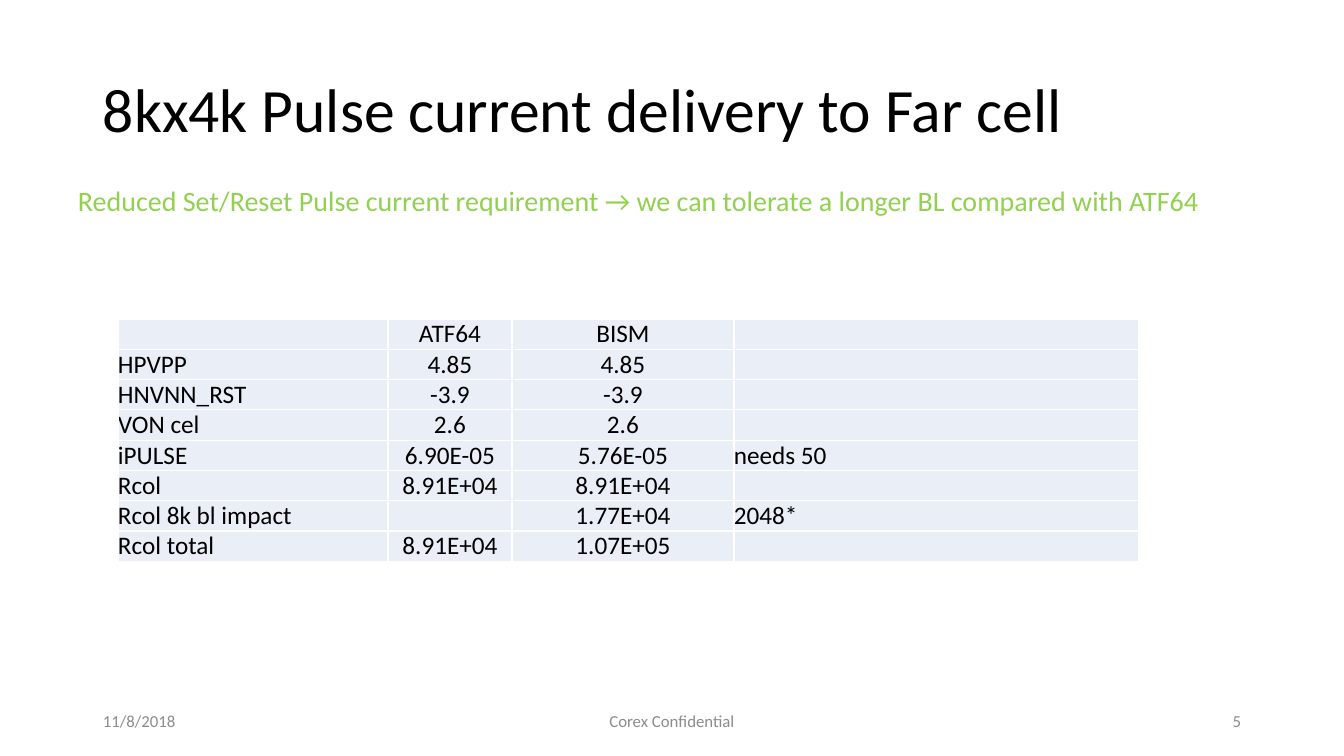
from lxml.etree import SubElement as Sub
from pptx import Presentation
from pptx.dml.color import RGBColor as Rgb
from pptx.enum.text import MSO_ANCHOR as Anchor, PP_ALIGN as Align
from pptx.oxml.ns import qn

COLORS = {"ink": "000000", "green": "92D050", "gray": "8C8C8C",
          "cell": "EAEFF7", "edge": "FFFFFF"}


def px(n):
    return round(n * 914400 / 100.8)


def write(frame, text, size, color, align, anchor):
    frame.vertical_anchor = anchor
    para = frame.paragraphs[0]
    para.text = text
    para.alignment = align
    para.font.name = "Calibri"
    para.font.size = px(size * 1.4)
    para.font.color.rgb = Rgb.from_string(COLORS[color])
    return para


deck = Presentation()
deck.slide_width, deck.slide_height = px(1344), px(756)
slide = deck.slides.add_slide(deck.slide_layouts[6])

texts = [
    ("8kx4k Pulse current delivery to Far cell",
     (93, 40, 1159, 146), 44, "ink", Align.LEFT, Anchor.MIDDLE, True),
    ("Reduced Set/Reset Pulse current requirement → we can tolerate a longer BL compared with ATF64",
     (68, 179, 1154, 44), 20, "green", Align.LEFT, Anchor.TOP, False),
    ("11/8/2018", (93, 701, 302, 40), 12, "gray", Align.LEFT, Anchor.MIDDLE, True),
    ("Corex Confidential", (445, 701, 454, 40), 12, "gray", Align.CENTER, Anchor.MIDDLE, True),
    ("5", (949, 701, 302, 40), 12, "gray", Align.RIGHT, Anchor.MIDDLE, True),
]
for text, place, size, color, align, anchor, wrap in texts:
    frame = slide.shapes.add_textbox(*map(px, place)).text_frame
    frame.word_wrap = wrap
    para = write(frame, text, size, color, align, anchor)
    if size == 44:
        para.line_spacing = 0.9

rows = [
    ("", "ATF64", "BISM", ""),
    ("HPVPP", "4.85", "4.85", ""),
    ("HNVNN_RST", "-3.9", "-3.9", ""),
    ("VON cel", "2.6", "2.6", ""),
    ("iPULSE", "6.90E-05", "5.76E-05", "needs 50"),
    ("Rcol", "8.91E+04", "8.91E+04", ""),
    ("Rcol 8k bl impact", "", "1.77E+04", "2048*"),
    ("Rcol total", "8.91E+04", "1.07E+05", ""),
]
widths = [270, 124, 222, 405]
high = 30
table = slide.shapes.add_table(len(rows), len(widths), px(118), px(319),
                               px(sum(widths)), px(high * len(rows))).table
for col, width in zip(table.columns, widths):
    col.width = px(width)
for r, row in enumerate(rows):
    table.rows[r].height = px(high)
    for c, text in enumerate(row):
        cell = table.cell(r, c)
        cell.margin_left = cell.margin_right = cell.margin_top = cell.margin_bottom = 0
        mid = c in (1, 2)
        write(cell.text_frame, text, 18, "ink",
              Align.CENTER if mid else Align.LEFT, None)
        cell.vertical_anchor = Anchor.MIDDLE if mid else Anchor.BOTTOM
        props = cell._tc.get_or_add_tcPr()
        for side in ("lnL", "lnR", "lnT", "lnB"):
            line = Sub(props, qn("a:" + side), w="12700")
            Sub(Sub(line, qn("a:solidFill")), qn("a:srgbClr"), val=COLORS["edge"])
        cell.fill.solid()
        cell.fill.fore_color.rgb = Rgb.from_string(COLORS["cell"])

deck.save("out.pptx")
